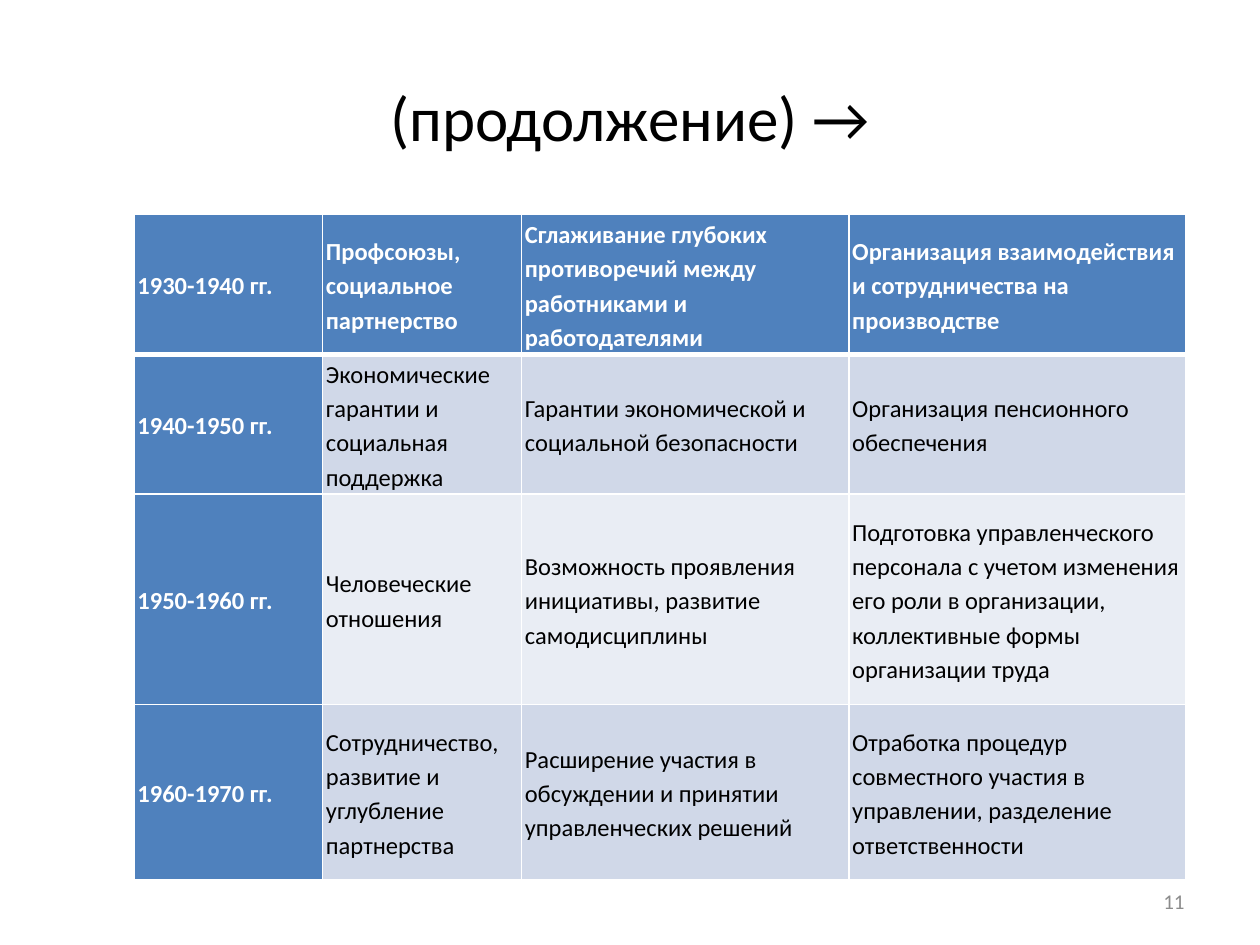
from lxml import etree
from pptx import Presentation
from pptx import util as u
from pptx.dml.color import RGBColor
from pptx.enum import text
from pptx.oxml import ns

FONT = "Calibri"
COLORS = {
    "ink": "000000",
    "light": "FFFFFF",
    "accent": "4F81BD",
    "band_dark": "D0D8E8",
    "band_light": "E9EDF4",
    "page_number": "8C8C8C",
}
COLUMN_WIDTHS = [3.8, 4.01, 6.6, 6.8]
ROW_HEIGHTS = [2.82, 2.82, 4.24, 3.53]
PERIODS = [
    ["1930-1940 гг.", "Профсоюзы, социальное партнерство",
     "Сглаживание глубоких противоречий между работниками и работодателями",
     "Организация взаимодействия и сотрудничества на производстве"],
    ["1940-1950 гг.", "Экономические гарантии и социальная поддержка",
     "Гарантии экономической и социальной безопасности",
     "Организация пенсионного обеспечения"],
    ["1950-1960 гг.", "Человеческие отношения",
     "Возможность проявления инициативы, развитие самодисциплины",
     "Подготовка управленческого персонала с учетом изменения его роли "
     "в организации, коллективные формы организации труда"],
    ["1960-1970 гг.", "Сотрудничество, развитие и углубление партнерства",
     "Расширение участия в обсуждении и принятии управленческих решений",
     "Отработка процедур совместного участия в управлении, "
     "разделение ответственности"],
]


def rgb(name):
    return RGBColor.from_string(COLORS[name])


def add_run(paragraph, wording, size, color, bold=False):
    run = paragraph.add_run()
    run.text = wording
    run.font.name = FONT
    run.font.size = u.Pt(size)
    run.font.bold = bold
    run.font.color.rgb = rgb(color)


def add_line_of_text(slide, box, wording, size, color, align):
    frame = slide.shapes.add_textbox(*map(u.Cm, box)).text_frame
    frame.word_wrap = True
    frame.vertical_anchor = text.MSO_ANCHOR.MIDDLE
    paragraph = frame.paragraphs[0]
    paragraph.alignment = align
    add_run(paragraph, wording, size, color)


def set_borders(cell, widths):
    """Draw white cell borders; widths holds points for each side."""
    properties = cell._tc.get_or_add_tcPr()
    for position, side in enumerate("LRTB"):
        line = etree.Element(ns.qn(f"a:ln{side}"), w=str(u.Pt(widths[side])))
        fill = etree.SubElement(line, ns.qn("a:solidFill"))
        etree.SubElement(fill, ns.qn("a:srgbClr"), val=COLORS["light"])
        properties.insert(position, line)


def fill_cell(cell, wording, row, column):
    is_heading = row == 0 or column == 0
    band = "band_dark" if row % 2 else "band_light"
    cell.fill.solid()
    cell.fill.fore_color.rgb = rgb("accent" if is_heading else band)
    set_borders(cell, {"L": 1, "R": 1, "T": 3 if row == 1 else 1,
                       "B": 3 if row == 0 else 1})
    cell.margin_left = cell.margin_right = u.Cm(0.07)
    cell.margin_top = cell.margin_bottom = 0
    cell.vertical_anchor = text.MSO_ANCHOR.MIDDLE
    paragraph = cell.text_frame.paragraphs[0]
    paragraph.line_spacing = 1.15
    add_run(paragraph, wording, 14, "light" if is_heading else "ink", is_heading)


def add_periods_table(slide, left, top):
    table = slide.shapes.add_table(
        len(ROW_HEIGHTS), len(COLUMN_WIDTHS), u.Cm(left), u.Cm(top),
        u.Cm(sum(COLUMN_WIDTHS)), u.Cm(sum(ROW_HEIGHTS))).table
    table.first_col = True
    for column, width in zip(table.columns, COLUMN_WIDTHS):
        column.width = u.Cm(width)
    for row, height in zip(table.rows, ROW_HEIGHTS):
        row.height = u.Cm(height)
    for r, period in enumerate(PERIODS):
        for c, wording in enumerate(period):
            fill_cell(table.cell(r, c), wording, r, c)


def main():
    deck = Presentation()
    deck.slide_width, deck.slide_height = u.Cm(25.4), u.Cm(19.05)
    slide = deck.slides.add_slide(deck.slide_layouts[6])
    add_line_of_text(slide, (1.27, 0.76, 22.86, 3.18), "(продолжение) →",
                     36, "ink", text.PP_ALIGN.CENTER)
    add_periods_table(slide, 2.7, 4.32)
    add_line_of_text(slide, (18.2, 17.66, 5.93, 1.01), "11",
                     12, "page_number", text.PP_ALIGN.RIGHT)
    deck.save("out.pptx")


if __name__ == "__main__":
    main()
